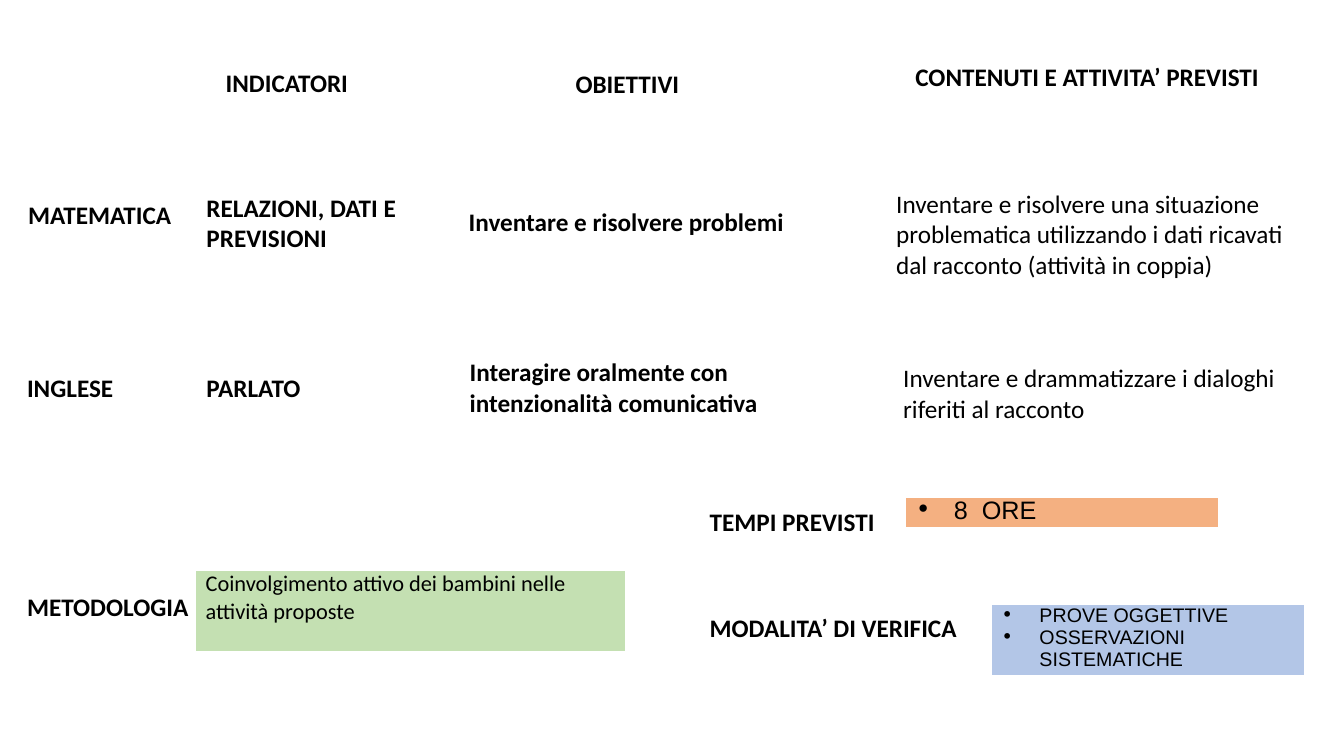
import pptx
import pptx.dml.color
import pptx.enum.text
import pptx.oxml
import pptx.oxml.ns
import pptx.util

PX = 9144
HUES = {"ink": "000000", "line": "FFFFFF", "green": "C4E0B2",
        "blue": "B3C6E7", "orange": "F4B081"}
NS = pptx.oxml.ns.nsdecls("a")


def px(*sizes):
    return [pptx.util.Emu(size * PX) for size in sizes]


def rgb(name):
    return pptx.dml.color.RGBColor.from_string(HUES[name])


def write(para, text, size=18, bold=False, face="Calibri", bullet=False):
    if bullet:
        props = para._p.get_or_add_pPr()
        indent = px(38)[0]
        props.set("marL", str(indent))
        props.set("indent", str(-indent))
        for xml in (f'<a:buClr {NS}><a:srgbClr val="{HUES["ink"]}"/></a:buClr>',
                    f'<a:buChar {NS} char="∙"/>'):
            props.append(pptx.oxml.parse_xml(xml))
    run = para.add_run()
    run.text = text
    run.font.name = face
    run.font.size = pptx.util.Pt(size)
    run.font.bold = bold
    run.font.color.rgb = rgb("ink")


class Board:
    """Holds the slide and draws its labels and coloured panels."""

    def __init__(self, deck):
        self.slide = deck.slides.add_slide(deck.slide_layouts[6])

    def label(self, text, left, top, width, lines=1, bold=True):
        box = self.slide.shapes.add_textbox(*px(left, top, width, 10 + 30 * lines))
        frame = box.text_frame
        frame.word_wrap = True
        frame.auto_size = pptx.enum.text.MSO_AUTO_SIZE.SHAPE_TO_FIT_TEXT
        write(frame.paragraphs[0], text, bold=bold)

    def panel(self, texts, left, top, width, height, fill, **style):
        frame = self.slide.shapes.add_table(1, 1, *px(left, top, width, height))
        table = frame.table
        table.first_row = table.horz_banding = False
        cell = table.cell(0, 0)
        cell.margin_left = cell.margin_right = px(10)[0]
        cell.margin_top = cell.margin_bottom = 0
        cell.fill.solid()
        cell.fill.fore_color.rgb = rgb(fill)
        props = cell._tc.get_or_add_tcPr()
        for spot, side in enumerate("LRTB"):
            props.insert(spot, pptx.oxml.parse_xml(
                f'<a:ln{side} {NS} w="12700"><a:solidFill>'
                f'<a:srgbClr val="{HUES["line"]}"/></a:solidFill></a:ln{side}>'))
        for spot, text in enumerate(texts):
            body = cell.text_frame
            para = body.add_paragraph() if spot else body.paragraphs[0]
            write(para, text, **style)


def main():
    deck = pptx.Presentation()
    deck.slide_width, deck.slide_height = px(1333, 750)
    board = Board(deck)

    heads = [("INDICATORI", 214, 62, 177),
             ("OBIETTIVI", 561, 63, 173),
             ("CONTENUTI E ATTIVITA’ PREVISTI", 898, 56, 361)]
    maths = [("MATEMATICA", 18, 193, 177),
             ("RELAZIONI, DATI E PREVISIONI", 195, 186, 260, 2),
             ("Inventare e risolvere problemi", 455, 200, 393),
             ("Inventare e risolvere una situazione problematica utilizzando "
              "i dati ricavati dal racconto (attività in coppia)",
              879, 182, 415, 3, False)]
    english = [("INGLESE", 17, 364, 177),
               ("PARLATO", 195, 364, 260),
               ("Interagire oralmente con intenzionalità comunicativa",
                456, 349, 393, 2),
               ("Inventare e drammatizzare i dialoghi riferiti al racconto",
                886, 355, 415, 2, False)]
    plans = [("METODOLOGIA", 17, 582, 244),
             ("TEMPI PREVISTI", 694, 497, 265),
             ("MODALITA’ DI VERIFICA", 694, 603, 265)]
    for item in heads + maths + english + plans:
        board.label(*item)

    board.panel(["Coinvolgimento attivo dei bambini nelle attività proposte"],
                194, 566, 426, 80, "green", size=16)
    board.panel(["8  ORE"], 898, 493, 311, 30, "orange",
                face="Arial", bullet=True)
    board.panel(["PROVE OGGETTIVE", "OSSERVAZIONI SISTEMATICHE"],
                983, 600, 311, 47, "blue", size=14, face="Arial", bullet=True)
    deck.save("out.pptx")


if __name__ == "__main__":
    main()
